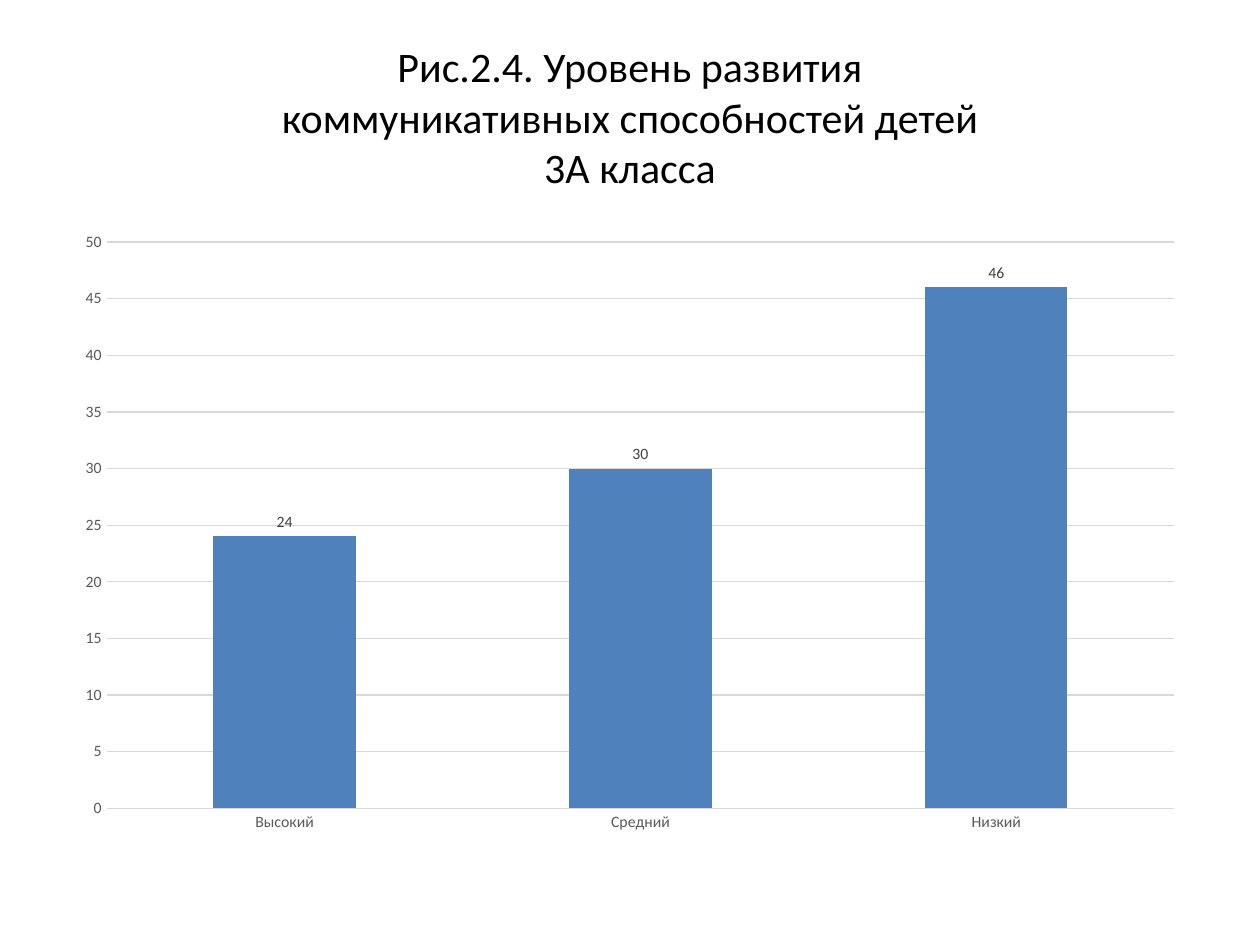
import pptx
import pptx.util
import pptx.chart.data
import pptx.dml.color
import pptx.enum.chart
import pptx.enum.text

Pt = pptx.util.Pt
RGBColor = pptx.dml.color.RGBColor

BLACK = RGBColor(0x00, 0x00, 0x00)
BAR = RGBColor(0x4F, 0x81, 0xBD)
GRID = RGBColor(0xD9, 0xD9, 0xD9)
AXIS_TEXT = RGBColor(0x59, 0x59, 0x59)
LABEL_TEXT = RGBColor(0x40, 0x40, 0x40)
FONT = "Calibri"


def set_font(font, size, color):
    font.name = FONT
    font.size = Pt(size)
    font.bold = False
    font.color.rgb = color


prs = pptx.Presentation()
prs.slide_width = Pt(720)
prs.slide_height = Pt(540)
s = prs.slides.add_slide(prs.slide_layouts[5])

title = s.shapes.title
title.left, title.top, title.width, title.height = Pt(144.7), Pt(21.6), Pt(430.6), Pt(90)
tf = title.text_frame
tf.text = "Рис.2.4. Уровень развития коммуникативных способностей детей 3А класса"
tf.word_wrap = True
tf.auto_size = pptx.enum.text.MSO_AUTO_SIZE.NONE
tf.vertical_anchor = pptx.enum.text.MSO_ANCHOR.MIDDLE
p = tf.paragraphs[0]
p.alignment = pptx.enum.text.PP_ALIGN.CENTER
set_font(p.runs[0].font, 24, BLACK)

data = pptx.chart.data.CategoryChartData()
data.categories = ["Высокий", "Средний", "Низкий"]
data.add_series("Series 1", (24, 30, 46))
chart = s.shapes.add_chart(
    pptx.enum.chart.XL_CHART_TYPE.COLUMN_CLUSTERED,
    Pt(36), Pt(126), Pt(648), Pt(356.4), data,
).chart
chart.has_title = False
chart.has_legend = False
set_font(chart.font, 10, BLACK)

for axis in (chart.category_axis, chart.value_axis):
    axis.major_tick_mark = pptx.enum.chart.XL_TICK_MARK.NONE
    axis.minor_tick_mark = pptx.enum.chart.XL_TICK_MARK.NONE
    axis.format.line.fill.background()
    set_font(axis.tick_labels.font, 9, AXIS_TEXT)

value_axis = chart.value_axis
value_axis.minimum_scale = 0
value_axis.maximum_scale = 50
value_axis.major_unit = 5
value_axis.has_major_gridlines = True
grid = value_axis.major_gridlines.format.line
grid.color.rgb = GRID
grid.width = Pt(0.75)

plot = chart.plots[0]
plot.gap_width = 150
plot.vary_by_categories = False
bars = plot.series[0]
bars.format.fill.solid()
bars.format.fill.fore_color.rgb = BAR
labels = bars.data_labels
labels.show_value = True
labels.position = pptx.enum.chart.XL_LABEL_POSITION.OUTSIDE_END
set_font(labels.font, 9, LABEL_TEXT)

prs.save("out.pptx")
